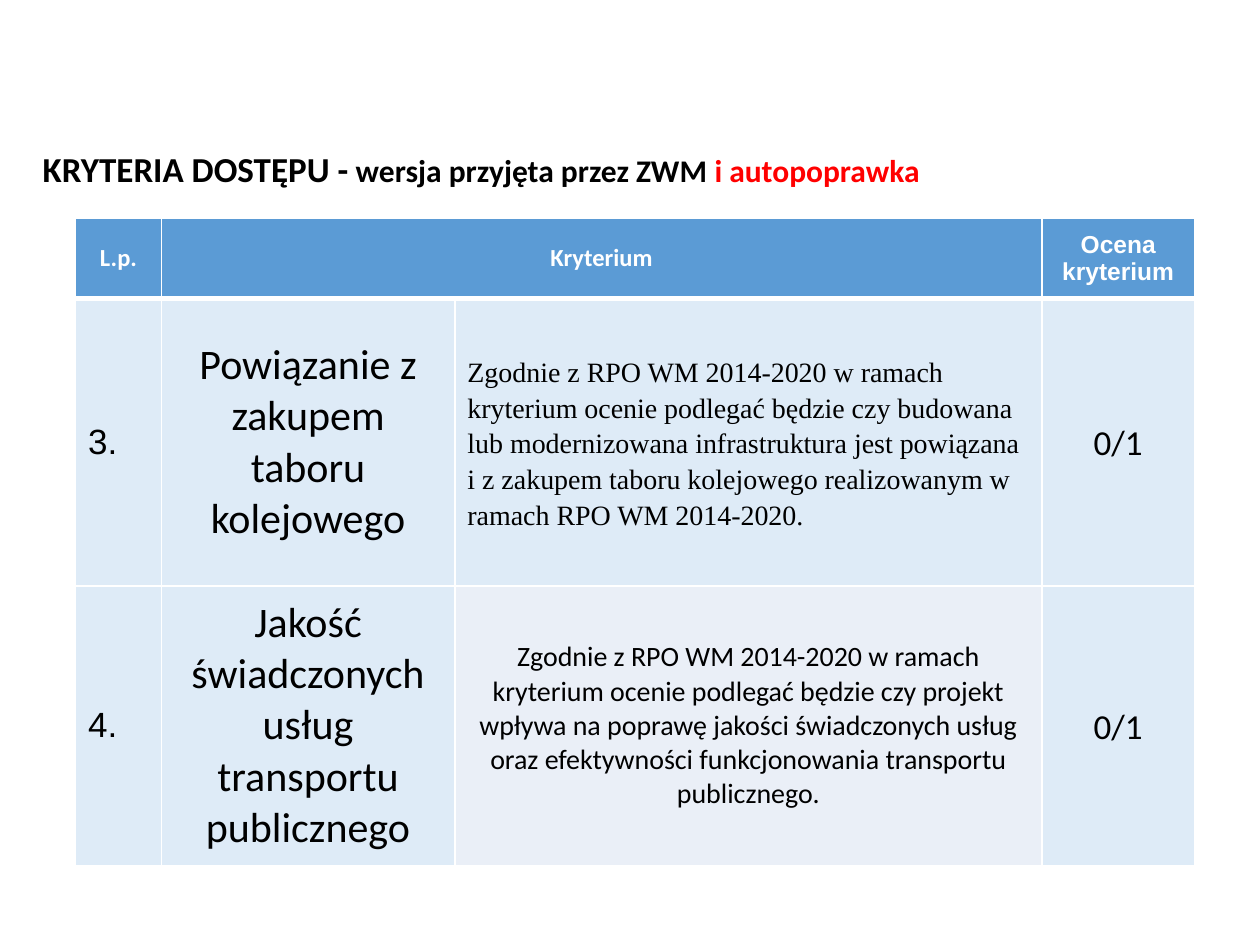
from dataclasses import dataclass

from lxml.etree import SubElement
from pptx import Presentation
from pptx.dml.color import RGBColor
from pptx.enum.text import MSO_ANCHOR, MSO_AUTO_SIZE, PP_ALIGN
from pptx.oxml.ns import qn
from pptx.table import Table, _Cell
from pptx.text.text import _Paragraph
from pptx.util import Inches, Pt

COLORS = {
    "white": "FFFFFF",
    "black": "000000",
    "red": "FF0000",
    "header": "5B9BD5",
    "body": "DEEBF7",
    "light": "EAEFF7",
}
COLUMN_WIDTHS = [0.68, 2.33, 4.66, 1.21]
ROW_HEIGHTS = [0.64, 2.28, 2.22]


@dataclass
class CellText:
    text: str
    size: int
    font: str = "Calibri"
    color: str = "black"
    bold: bool = False
    align: PP_ALIGN = PP_ALIGN.CENTER
    spacing: float = 1.0
    fill: str = "body"
    inset: float | None = None


def heading(text: str, font: str = "Calibri") -> CellText:
    return CellText(text, 14, font, "white", True, fill="header")


def number(text: str) -> CellText:
    return CellText(text, 20, "Arial", align=PP_ALIGN.LEFT)


def score() -> CellText:
    return CellText("0/1", 20, spacing=1.07, inset=0.04)


ROWS = [
    [heading("L.p."), heading("Kryterium"), heading(""), heading("Ocena kryterium", "Arial")],
    [
        number("3."),
        CellText("Powiązanie z zakupem taboru kolejowego", 24),
        CellText(
            "Zgodnie z RPO WM 2014-2020 w ramach kryterium ocenie podlegać będzie czy "
            "budowana lub modernizowana infrastruktura jest powiązana i z zakupem taboru "
            "kolejowego realizowanym w ramach RPO WM 2014-2020.",
            16, "Times New Roman", align=PP_ALIGN.LEFT, spacing=1.15,
        ),
        score(),
    ],
    [
        number("4."),
        CellText("Jakość świadczonych usług transportu publicznego", 24),
        CellText(
            "Zgodnie z RPO WM 2014-2020 w ramach kryterium ocenie podlegać będzie czy "
            "projekt wpływa na poprawę jakości świadczonych usług oraz efektywności "
            "funkcjonowania transportu publicznego.",
            16, fill="light",
        ),
        score(),
    ],
]


def add_text(paragraph: _Paragraph, text: str, *, size: int, font: str = "Calibri",
             color: str = "black", bold: bool = False) -> None:
    span = paragraph.add_run()
    span.text = text
    span.font.size = Pt(size)
    span.font.name = font
    span.font.bold = bold
    span.font.color.rgb = RGBColor.from_string(COLORS[color])


def add_borders(cell: _Cell, bottom_width: float) -> None:
    properties = cell._tc.get_or_add_tcPr()
    for side, width in {"L": 1, "R": 1, "T": 1, "B": bottom_width}.items():
        line = SubElement(properties, qn(f"a:ln{side}"), w=str(Pt(width)))
        fill = SubElement(line, qn("a:solidFill"))
        SubElement(fill, qn("a:srgbClr"), val=COLORS["white"])


def fill_cell(cell: _Cell, content: CellText) -> None:
    add_borders(cell, 3 if content.fill == "header" else 1)
    cell.fill.solid()
    cell.fill.fore_color.rgb = RGBColor.from_string(COLORS[content.fill])
    cell.vertical_anchor = MSO_ANCHOR.MIDDLE
    if content.inset is not None:
        inset = Inches(content.inset)
        cell.margin_left = cell.margin_right = inset
        cell.margin_top = cell.margin_bottom = inset
    if content.text:
        para = cell.text_frame.paragraphs[0]
        para.alignment = content.align
        para.line_spacing = content.spacing
        add_text(para, content.text, size=content.size, font=content.font,
                 color=content.color, bold=content.bold)


def fill_table(table: Table) -> None:
    table.horz_banding = False
    for column, width in zip(table.columns, COLUMN_WIDTHS):
        column.width = Inches(width)
    for row, height, contents in zip(table.rows, ROW_HEIGHTS, ROWS):
        row.height = Inches(height)
        for cell, content in zip(row.cells, contents):
            fill_cell(cell, content)
    table.cell(0, 1).merge(table.cell(0, 2))


def main() -> None:
    deck = Presentation()
    deck.slide_width, deck.slide_height = Inches(10), Inches(7.5)
    page = deck.slides.add_slide(deck.slide_layouts[6])

    frame = page.shapes.add_table(
        len(ROW_HEIGHTS), len(COLUMN_WIDTHS), Inches(0.6), Inches(1.73),
        Inches(sum(COLUMN_WIDTHS)), Inches(sum(ROW_HEIGHTS)),
    )
    fill_table(frame.table)

    box = page.shapes.add_textbox(Inches(0.24), Inches(1.05), Inches(8.62), Inches(0.57))
    box.text_frame.word_wrap = True
    box.text_frame.auto_size = MSO_AUTO_SIZE.NONE
    box.text_frame.vertical_anchor = MSO_ANCHOR.MIDDLE
    title = box.text_frame.paragraphs[0]
    add_text(title, "KRYTERIA DOSTĘPU -", size=20, bold=True)
    add_text(title, " wersja przyjęta przez ZWM ", size=18, bold=True)
    add_text(title, "i autopoprawka", size=18, color="red", bold=True)

    deck.save("out.pptx")


if __name__ == "__main__":
    main()
